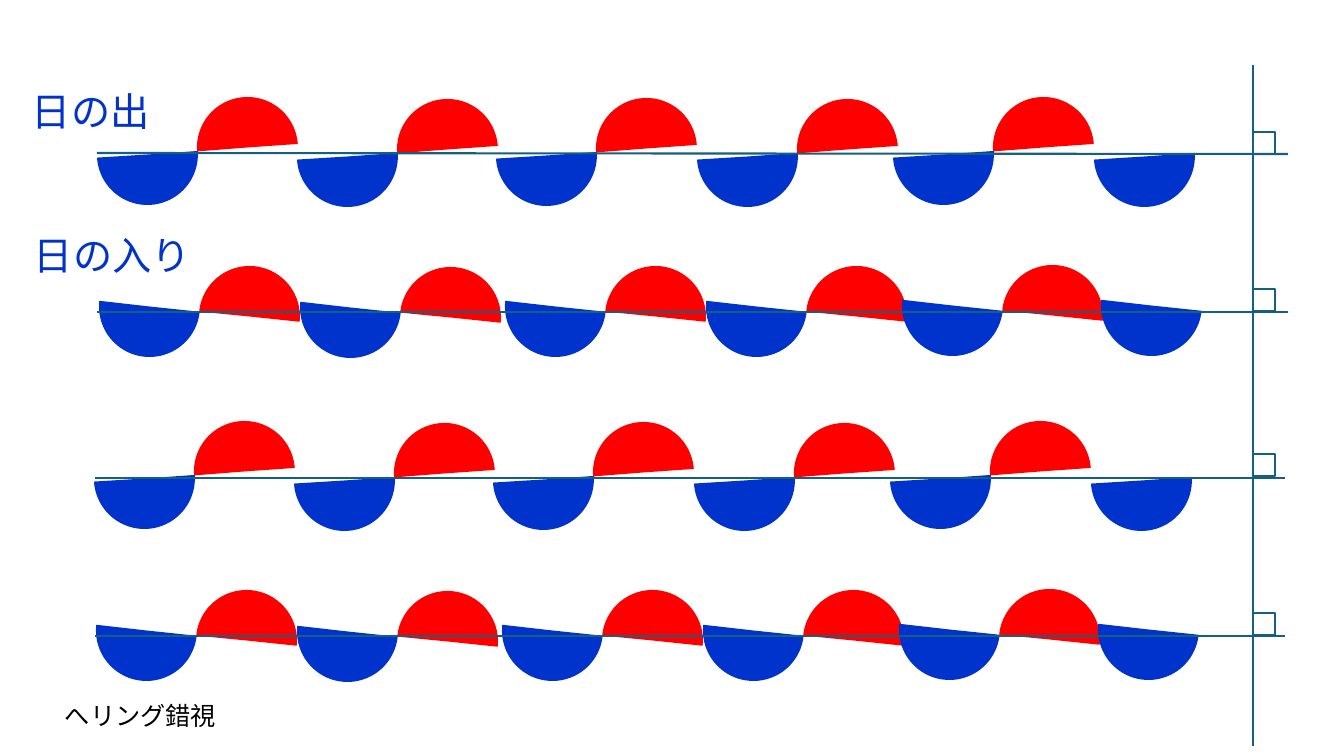
"""Build the Hering illusion slide with rows of rising and setting suns."""
import lxml.etree
import pptx
import pptx.dml.color
import pptx.enum.shapes
import pptx.enum.text
import pptx.oxml.ns
import pptx.util

PX = 914400 / 100.8
COLORS = {"sun": "FF0000", "sea": "0033CC", "line": "156082", "text": "000000"}
FONT = "Calibri"
PIE_SIZE = 101
SQUARE_SIZE = 22
UPRIGHT_X = 1253
ROW_COPY_SHIFT = (-3, 324)

SUNRISE = {
    "rotation": 356,
    "sun_offset": (100, -7),
    "sea": [(97, 104), (297, 106), (496, 105), (697, 106), (893, 104), (1094, 106)],
}
SUNSET = {
    "rotation": 6,
    "sun_offset": (100, 10),
    "sea": [(99, 256), (300, 257), (505, 256), (706, 256), (902, 255), (1101, 255)],
}
LABELS = [
    ("へリング錯視", (55, 695, 545, 40), 18, "text"),
    ("日の出", (22, 82, 158, 57), 28, "sea"),
    ("日の入り", (24, 226, 212, 57), 28, "sea"),
]
LINES = [
    (97, 312, 1288, 312),
    (97, 153, 1288, 154),
    (95, 636, 1285, 636),
    (95, 478, 1285, 478),
    (UPRIGHT_X, 65, UPRIGHT_X, 746),
]
SQUARE_TOPS = [132, 289, 454, 613]


def emu(*lengths):
    """Turn px lengths into EMU."""
    return [pptx.util.Emu(round(length * PX)) for length in lengths]


def color(name):
    """Return the named colour."""
    return pptx.dml.color.RGBColor.from_string(COLORS[name])


def add_half_disc(group, left, top, rotation, color_name, flip_vertical):
    """Add one tilted half disc to a row."""
    shape = group.shapes.add_shape(
        pptx.enum.shapes.MSO_SHAPE.PIE, *emu(left, top, PIE_SIZE, PIE_SIZE)
    )
    shape.adjustments[0] = 108
    shape.adjustments[1] = 0.291
    shape.rotation = rotation
    transform = shape.element.spPr.find(pptx.oxml.ns.qn("a:xfrm"))
    transform.set("flipH", "1")
    if flip_vertical:
        transform.set("flipV", "1")
    shape.shadow.inherit = False
    shape.fill.solid()
    shape.fill.fore_color.rgb = color(color_name)
    shape.line.fill.background()


def add_row(slide, row, shift):
    """Add one grouped row of alternating half discs."""
    group = slide.shapes.add_group_shape()
    sun_x, sun_y = row["sun_offset"]
    for index, (sea_left, sea_top) in enumerate(row["sea"]):
        left, top = sea_left + shift[0], sea_top + shift[1]
        if index < len(row["sea"]) - 1:
            add_half_disc(group, left + sun_x, top + sun_y, row["rotation"], "sun", False)
        add_half_disc(group, left, top, row["rotation"], "sea", True)


def add_label(slide, text, box, size, color_name):
    """Add one line of text."""
    text_frame = slide.shapes.add_textbox(*emu(*box)).text_frame
    text_frame.word_wrap = True
    text_frame.auto_size = pptx.enum.text.MSO_AUTO_SIZE.SHAPE_TO_FIT_TEXT
    text_frame.text = text
    font = text_frame.paragraphs[0].runs[0].font
    font.name = FONT
    font.size = pptx.util.Pt(size)
    font.color.rgb = color(color_name)


def format_line(line):
    """Give an outline the shared width and colour."""
    line.width = pptx.util.Pt(1.5)
    line.color.rgb = color("line")


def add_line(group, ends):
    """Add one straight line."""
    connector = group.shapes.add_connector(
        pptx.enum.shapes.MSO_CONNECTOR.STRAIGHT, *emu(*ends)
    )
    format_line(connector.line)
    lxml.etree.SubElement(connector.element.spPr, pptx.oxml.ns.qn("a:effectLst"))


def add_right_angle(group, top):
    """Add one right-angle mark beside the upright line."""
    shape = group.shapes.add_shape(
        pptx.enum.shapes.MSO_SHAPE.RECTANGLE,
        *emu(UPRIGHT_X, top, SQUARE_SIZE, SQUARE_SIZE),
    )
    shape.shadow.inherit = False
    shape.fill.background()
    format_line(shape.line)


def main():
    """Build and save the slide."""
    presentation = pptx.Presentation()
    presentation.slide_width, presentation.slide_height = emu(1344, 756)
    slide = presentation.slides.add_slide(presentation.slide_layouts[6])
    for shift in ((0, 0), ROW_COPY_SHIFT):
        for row in (SUNRISE, SUNSET):
            add_row(slide, row, shift)
    for label in LABELS:
        add_label(slide, *label)
    frame = slide.shapes.add_group_shape()
    for ends in LINES:
        add_line(frame, ends)
    for top in SQUARE_TOPS:
        add_right_angle(frame, top)
    presentation.save("out.pptx")


if __name__ == "__main__":
    main()
